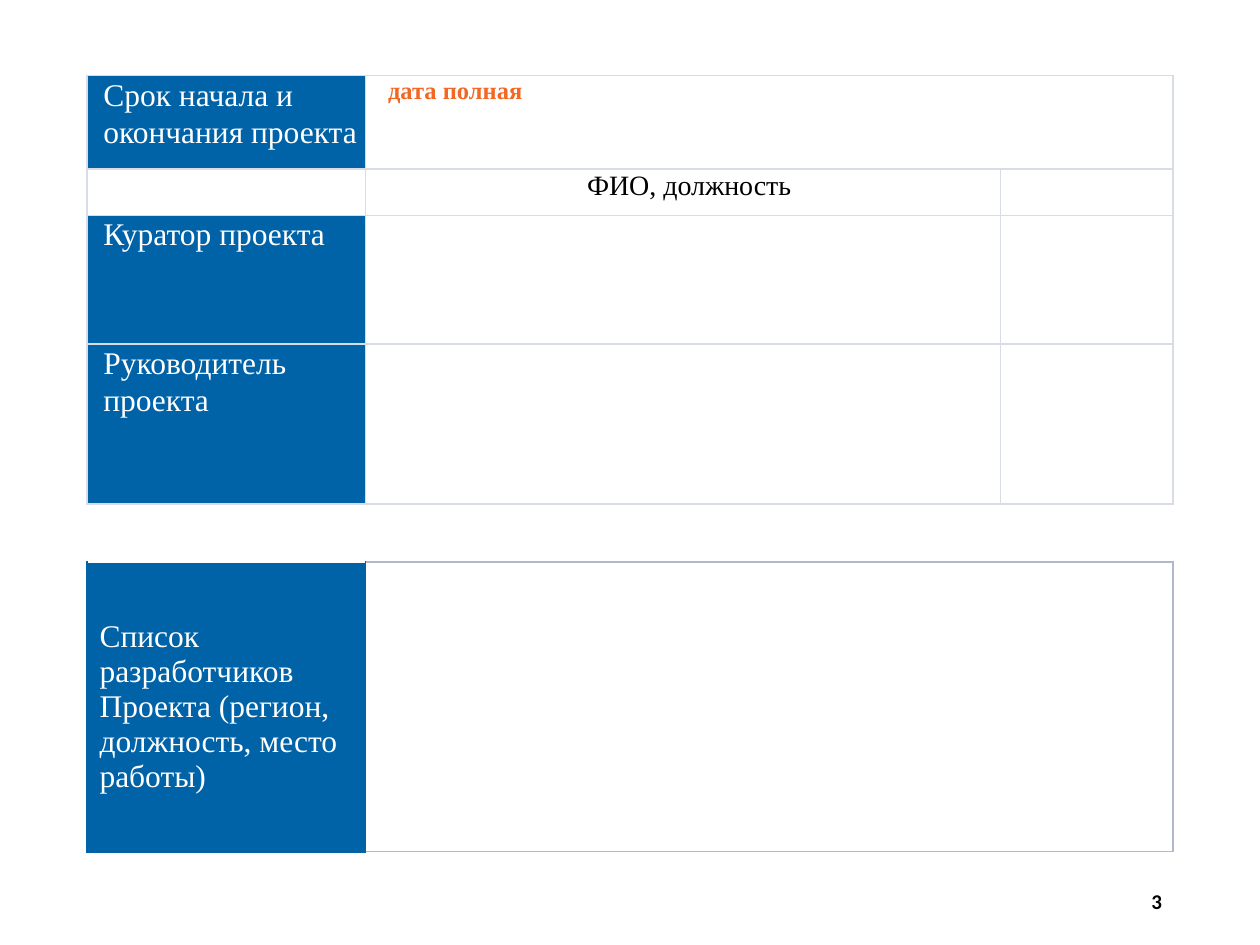
from dataclasses import dataclass

from pptx import Presentation
from pptx.dml.color import RGBColor as Rgb
from pptx.enum.text import MSO_ANCHOR as Anchor, PP_ALIGN as Align
from pptx.oxml.xmlchemy import OxmlElement as Node
from pptx.util import Inches, Pt


@dataclass(frozen=True)
class Theme:
    blue: str = "0062A7"
    white: str = "FFFFFF"
    black: str = "000000"
    orange: str = "F26722"
    grid: str = "D8DCE5"
    frame: str = "B0B9CB"
    serif: str = "Times New Roman"
    sans: str = "Calibri"
    label: int = 18
    head: int = 16
    date: int = 14
    page: int = 12


theme = Theme()


def style(part, size, color, face=theme.serif, bold=False):
    for run in part.runs:
        font = run.font
        font.name, font.size, font.bold = face, Pt(size), bold
        font.color.rgb = Rgb.from_string(color)


def edge(cell, side, color, width):
    line = Node(f"a:ln{side}")
    line.set("w", str(Pt(width)))
    fill = Node("a:solidFill")
    tint = Node("a:srgbClr")
    tint.set("val", color)
    fill.append(tint)
    line.append(fill)
    cell._tc.get_or_add_tcPr().append(line)


def paint(cell, fill, edges):
    for side, (color, width) in zip("LRTB", edges):
        edge(cell, side, color, width)
    cell.fill.solid()
    cell.fill.fore_color.rgb = Rgb.from_string(fill)


def add_grid(slide, box, cols, rows):
    shape = slide.shapes.add_table(len(rows), len(cols), *map(Inches, box))
    table = shape.table
    table.first_row = table.horz_banding = False
    for col, width in zip(table.columns, cols):
        col.width = Inches(width)
    for row, height in zip(table.rows, rows):
        row.height = Inches(height)
    return table


def write(cell, text, size, color, indent=0.1, bold=False, align=Align.LEFT):
    cell.text_frame.text = text
    part = cell.text_frame.paragraphs[0]
    part.alignment, part.line_spacing = align, 1.07
    part._p.get_or_add_pPr().set("marL", str(Inches(indent)))
    style(part, size, color, bold=bold)


def add_roles(slide, box):
    table = add_grid(slide, box, (2.21, 5.04, 1.37), (0.74, 0.37, 1.02, 1.27))
    labels = ("Срок начала и окончания проекта", "", "Куратор проекта",
              "Руководитель проекта")
    for r, label in enumerate(labels):
        for c in range(3):
            cell = table.cell(r, c)
            cell.margin_left = cell.margin_right = Inches(0.03)
            cell.margin_top = cell.margin_bottom = 0
            blue = c == 0 and label
            paint(cell, theme.blue if blue else theme.white,
                  [(theme.grid, 1)] * 4)
        if label:
            write(table.cell(r, 0), label, theme.label, theme.white)
    table.cell(0, 1).merge(table.cell(0, 2))
    write(table.cell(0, 1), "дата полная", theme.date, theme.orange,
          indent=0.15, bold=True)
    write(table.cell(1, 1), "ФИО, должность", theme.head, theme.black,
          align=Align.CENTER)


def add_team(slide, box):
    table = add_grid(slide, box, (2.21, 6.41), (box[3],))
    label, blank = table.cell(0, 0), table.cell(0, 1)
    thick, thin = (theme.blue, 1.5), (theme.blue, 1)
    paint(label, theme.blue, (thick, thin, (theme.white, 1.5), thick))
    paint(blank, theme.white, [thin] + [(theme.frame, 1)] * 3)
    label.vertical_anchor = Anchor.MIDDLE
    label.text_frame.text = ("Список разработчиков\n"
                             "Проекта (регион, должность, место работы)")
    for part in label.text_frame.paragraphs:
        style(part, theme.label, theme.white)


def add_page(slide, box, text):
    frame = slide.shapes.add_textbox(*map(Inches, box)).text_frame
    frame.word_wrap = True
    frame.vertical_anchor = Anchor.MIDDLE
    frame.text = text
    part = frame.paragraphs[0]
    part.alignment = Align.RIGHT
    style(part, theme.page, theme.black, theme.sans, bold=True)


def main():
    deck = Presentation()
    deck.slide_width, deck.slide_height = Inches(10), Inches(7.5)
    slide = deck.slides.add_slide(deck.slide_layouts[6])
    left, width = 0.69, 8.62
    add_page(slide, (7.07, 6.95, 2.25, 0.4), "3")
    add_roles(slide, (left, 0.6, width, 3.4))
    add_team(slide, (left, 4.46, width, 2.3))
    deck.save("out.pptx")


if __name__ == "__main__":
    main()
